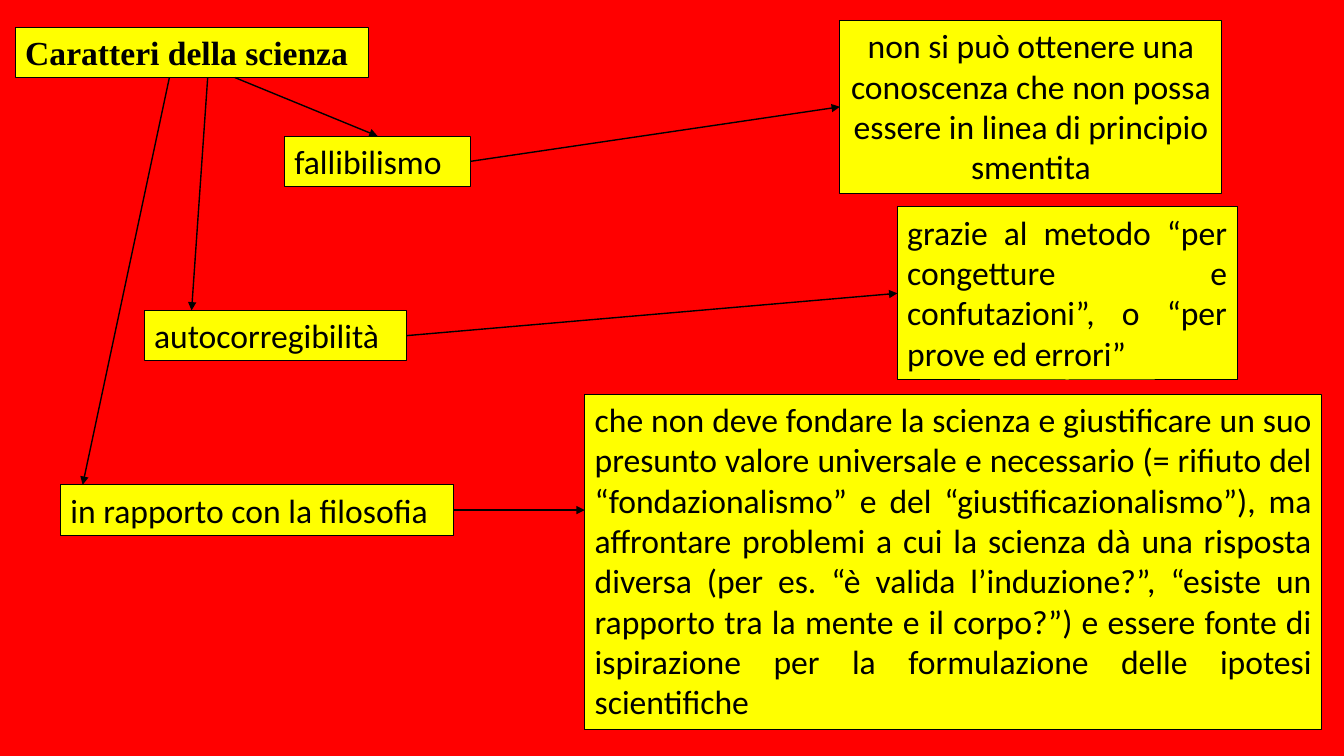
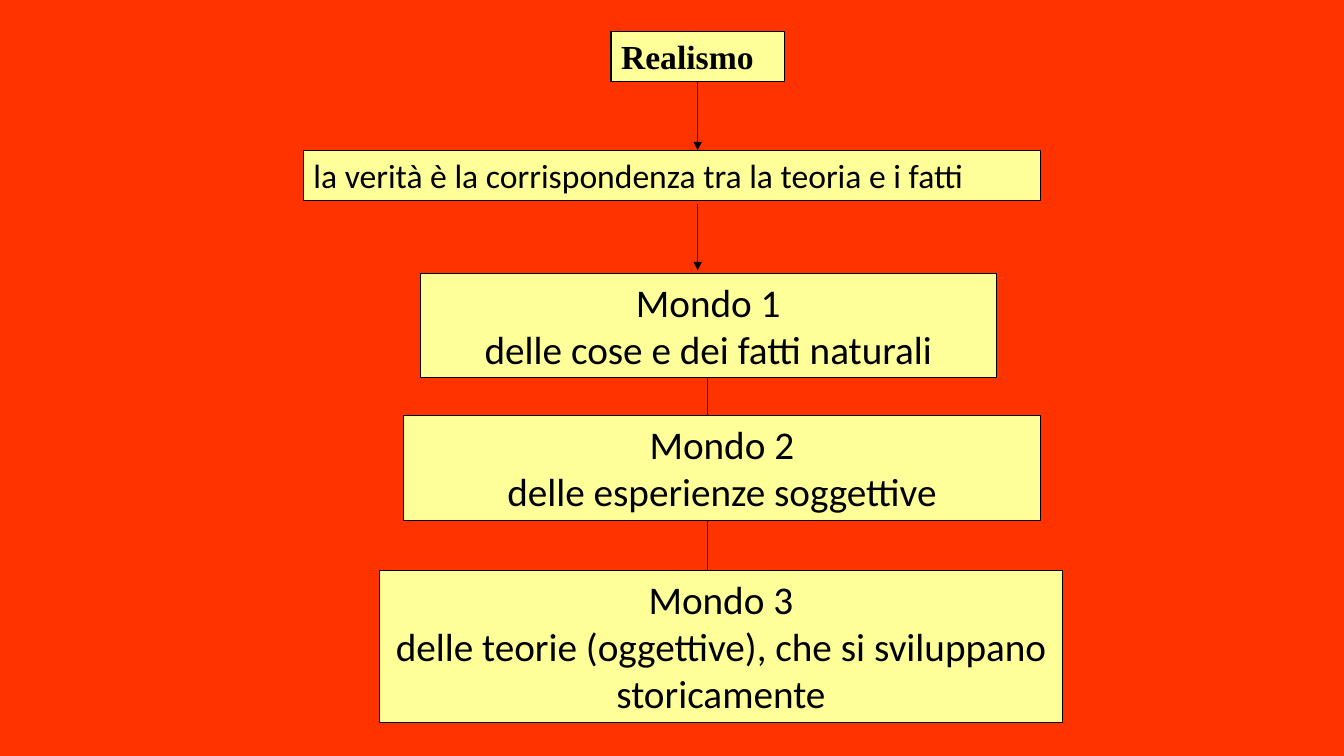
from lxml import etree
from pptx import Presentation
from pptx import util as u
from pptx.dml.color import RGBColor
from pptx.enum import shapes, text
from pptx.oxml import ns

TOP, LEFT, BOTTOM, RIGHT = range(4)
INK = "000000"
BODY_FONT, TITLE_FONT = "Calibri", "Times New Roman"
LINE_HEIGHT = 0.5
ALIGN = text.PP_ALIGN
FIT = text.MSO_AUTO_SIZE


def paint(color_format, hex_color):
    color_format.rgb = RGBColor.from_string(hex_color)


def fill_with(fill, hex_color):
    fill.solid()
    paint(fill.fore_color, hex_color)


def new_slide(deck, background, title, title_box, color):
    slide = deck.slides.add_slide(deck.slide_layouts[5])
    fill_with(slide.background.fill, background)
    heading = slide.shapes.title
    heading.left, heading.top, heading.width, heading.height = map(u.Inches, title_box)
    write_panel(heading, [title], color, font=TITLE_FONT, bold=True, fit=FIT.NONE)
    return slide, heading


def write_panel(panel, lines, color, align=ALIGN.LEFT, size=24, font=BODY_FONT,
                bold=False, fit=FIT.SHAPE_TO_FIT_TEXT):
    fill_with(panel.fill, color)
    paint(panel.line.color, INK)
    panel.line.width = u.Pt(0.75)
    frame = panel.text_frame
    frame.word_wrap = True
    frame.auto_size = fit
    frame.vertical_anchor = text.MSO_ANCHOR.TOP
    for index, line in enumerate(lines):
        paragraph = frame.add_paragraph() if index else frame.paragraphs[0]
        paragraph.alignment = align
        run = paragraph.add_run()
        run.text = line
        run.font.size = u.Pt(size)
        run.font.name = font
        run.font.bold = bold
        paint(run.font.color, INK)


def add_panel(slide, box, lines, color, **style):
    panel = slide.shapes.add_textbox(*map(u.Inches, box))
    write_panel(panel, lines, color, **style)
    return panel


def add_link(slide, start, end, source=None, target=None, arrow=True):
    link = slide.shapes.add_connector(
        shapes.MSO_CONNECTOR.STRAIGHT, *map(u.Inches, (*start, *end)))
    if source:
        link.begin_connect(*source)
    if target:
        link.end_connect(*target)
    paint(link.line.color, INK)
    link.line.width = u.Pt(1)
    if arrow:
        outline = link.line._get_or_add_ln()
        etree.SubElement(outline, ns.qn("a:tailEnd"), type="triangle")
    etree.SubElement(link._element.spPr, ns.qn("a:effectLst"))


def add_trait(slide, trait_box, trait, detail_box, detail, align, color, level=False):
    label = add_panel(slide, trait_box, [trait], color)
    explanation = add_panel(slide, detail_box, [detail], color, align=align)
    left, top, width, height = trait_box
    middle = top + height / 2
    add_link(slide, (left + width, middle), (detail_box[0], middle), (label, RIGHT),
             None if level else (explanation, LEFT))
    return label


def build_science(deck):
    yellow = "FFFF00"
    slide, _ = new_slide(deck, "FF0000", "Caratteri della scienza",
                         (0.15, 0.27, 3.51, LINE_HEIGHT), yellow)
    fallibilism = add_trait(
        slide, (2.82, 1.35, 1.85, LINE_HEIGHT), "fallibilismo",
        (8.33, 0.2, 3.79, 1.72),
        "non si può ottenere una conoscenza che non possa essere in linea di "
        "principio smentita", ALIGN.CENTER, yellow)
    add_trait(
        slide, (1.43, 3.08, 2.6, LINE_HEIGHT), "autocorregibilità",
        (8.9, 2.05, 3.37, 1.72),
        "grazie al metodo “per congetture e confutazioni”, o “per prove ed errori”",
        ALIGN.JUSTIFY, yellow)
    add_trait(
        slide, (0.6, 4.81, 3.9, LINE_HEIGHT), "in rapporto con la filosofia",
        (5.8, 3.91, 7.31, 3.33),
        "che non deve fondare la scienza e giustificare un suo presunto valore "
        "universale e necessario (= rifiuto del “fondazionalismo” e del "
        "“giustificazionalismo”), ma affrontare problemi a cui la scienza dà una "
        "risposta diversa (per es. “è valida l’induzione?”, “esiste un rapporto tra "
        "la mente e il corpo?”) e essere fonte di ispirazione per la formulazione "
        "delle ipotesi scientifiche", ALIGN.JUSTIFY, yellow, level=True)
    add_link(slide, (2.33, 0.77), (3.74, 1.35), target=(fallibilism, TOP))
    add_link(slide, (2.06, 0.77), (1.9, 3.08))
    add_link(slide, (1.68, 0.77), (0.82, 4.81))


def add_worlds(slide, worlds, axis, color):
    above = None
    for number, (box, description) in enumerate(worlds, 1):
        add_panel(slide, box, [f"Mondo {number}", description], color,
                  align=ALIGN.CENTER, size=28)
        if above:
            add_link(slide, (axis, above[1] + above[3]), (axis, box[1]), arrow=False)
        above = box


def build_realism(deck):
    cream, axis = "FFFF99", 6.92
    title_width = 1.72
    slide, heading = new_slide(
        deck, "FF3300", "Realismo",
        (axis - title_width / 2, 0.31, title_width, LINE_HEIGHT), cream)
    add_panel(slide, (3.01, 1.49, 7.31, LINE_HEIGHT),
              ["la verità è la corrispondenza tra la teoria e i fatti"], cream)
    add_worlds(slide, [
        ((4.17, 2.71, 5.71, 1.04), "delle cose e dei fatti naturali"),
        ((4, 4.12, 6.32, 1.04), "delle esperienze soggettive"),
        ((3.76, 5.66, 6.78, 1.51),
         "delle teorie (oggettive), che si sviluppano storicamente"),
    ], 7.02, cream)
    add_link(slide, (axis, 0.81), (axis, 1.49), source=(heading, BOTTOM))
    add_link(slide, (axis, 2.02), (axis, 2.68))


def main():
    deck = Presentation()
    deck.slide_width, deck.slide_height = u.Inches(13.33), u.Inches(7.5)
    build_science(deck)
    build_realism(deck)
    deck.save("out.pptx")


if __name__ == "__main__":
    main()
